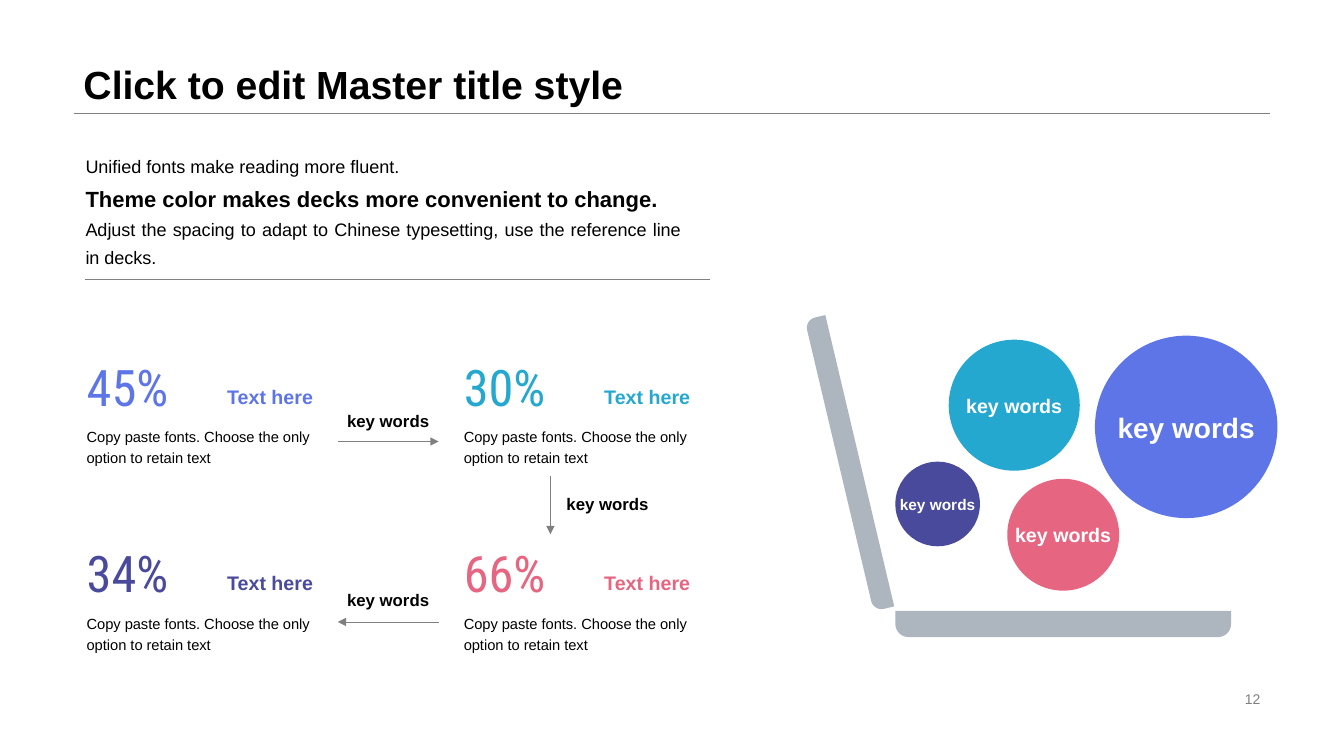
"""Build the key words slide with four figures, arrows and a laptop of bubbles."""
from dataclasses import dataclass
from itertools import product

from lxml import etree
from pptx import Presentation, util as u
from pptx.dml.color import RGBColor
from pptx.enum import shapes as sh, text as tx
from pptx.oxml.ns import qn


@dataclass(frozen=True)
class Theme:
    """Colours, fonts and type sizes."""
    ink: str = "000000"
    white: str = "FFFFFF"
    grey: str = "808080"
    shell: str = "ADB5BF"
    blue: str = "5E75E8"
    cyan: str = "25A8D0"
    navy: str = "4A4A9D"
    pink: str = "E66581"
    font: str = "Arial"
    slim: str = "Roboto Condensed"
    title: float = 28
    figure: float = 36
    lead: float = 15.7
    body: float = 12.9
    head: float = 14
    label: float = 12
    note: float = 10.5
    page: float = 10
    small: float = 11
    large: float = 20


@dataclass(frozen=True)
class Box:
    """Place in grid columns and rows."""
    col: float
    row: float
    wide: float
    high: float


@dataclass(frozen=True)
class Run:
    """One run of styled text."""
    words: str
    size: float
    hue: str = Theme.ink
    bold: bool = False
    font: str = Theme.font


@dataclass(frozen=True)
class Rule:
    """A straight line between two grid points."""
    start: tuple[float, float]
    end: tuple[float, float]
    width: float = 0.25
    arrow: bool = False


@dataclass(frozen=True)
class Ball:
    """A circle with a label."""
    col: float
    row: float
    size: float
    hue: str
    type: float


@dataclass(frozen=True)
class Bar:
    """A turned half of the laptop."""
    box: Box
    turn: float


@dataclass(frozen=True)
class Tag:
    """A label beside an arrow."""
    col: float
    row: float
    side: tx.PP_ALIGN


T = Theme()
CELL = u.Inches(0.1)
LEFT, MID, RIGHT, FULL = tx.PP_ALIGN.LEFT, tx.PP_ALIGN.CENTER, tx.PP_ALIGN.RIGHT, tx.PP_ALIGN.JUSTIFY
TOP, CORE, BASE = tx.MSO_ANCHOR.TOP, tx.MSO_ANCHOR.MIDDLE, tx.MSO_ANCHOR.BOTTOM
KEY = "key words"
FACTS = [("45%", T.blue), ("30%", T.cyan), ("34%", T.navy), ("66%", T.pink)]
RULES = [
    Rule((7.3, 11.2), (126, 11.2)),
    Rule((8.4, 27.7), (70.4, 27.7), 0.75),
    Rule((33.5, 43.8), (43.5, 43.8), arrow=True),
    Rule((43.5, 61.7), (33.5, 61.7), arrow=True),
    Rule((54.6, 47.2), (54.6, 53), arrow=True),
]
TAGS = [Tag(33.3, 40, MID), Tag(33.3, 57.8, MID), Tag(55.2, 48.3, LEFT)]
BARS = [Bar(Box(88.8, 60.6, 33.3, 2.6), 180), Bar(Box(69.4, 44.9, 29.7, 2.1), 256.7)]
BALLS = [
    Ball(88.8, 45.8, 8.4, T.navy, T.small),
    Ball(99.9, 47.5, 11.1, T.pink, T.head),
    Ball(94.1, 33.7, 13, T.cyan, T.head),
    Ball(108.6, 33.3, 18.1, T.blue, T.large),
]
INTRO = [
    Run("Unified fonts make reading more fluent.", T.body),
    Run("Theme color makes decks more convenient to change.", T.lead, bold=True),
    Run("Adjust the spacing to adapt to Chinese typesetting, use the reference line in decks.", T.body),
]


def grid(*cells: float) -> list[int]:
    """Turn grid counts into slide lengths."""
    return [round(n * CELL) for n in cells]


def place(box: Box) -> list[int]:
    """Give left, top, width and height."""
    return grid(box.col, box.row, box.wide, box.high)


def write(frame, runs: list[Run], side=LEFT, hold=TOP, wrap: bool = True, lead: float = 1) -> None:
    """Fill a text frame with one run to a paragraph."""
    frame.word_wrap = wrap
    frame.vertical_anchor = hold
    for i, item in enumerate(runs):
        para = frame.add_paragraph() if i else frame.paragraphs[0]
        para.alignment = side
        para.line_spacing = lead
        run = para.add_run()
        run.text = item.words
        font = run.font
        font.name, font.size, font.bold = item.font, u.Pt(item.size), item.bold
        font.color.rgb = RGBColor.from_string(item.hue)


def label(slide, box: Box, runs: list[Run], tight: bool = False, **style) -> None:
    """Add a text box, without insets if tight."""
    frame = slide.shapes.add_textbox(*place(box)).text_frame
    if tight:
        frame.margin_left = frame.margin_right = frame.margin_top = frame.margin_bottom = 0
    write(frame, runs, **style)


def solid(slide, kind, box: Box, hue: str):
    """Add a plain filled shape."""
    shape = slide.shapes.add_shape(kind, *place(box))
    shape.shadow.inherit = False
    shape.fill.solid()
    shape.fill.fore_color.rgb = RGBColor.from_string(hue)
    shape.line.fill.background()
    return shape


def draw(slide, rule: Rule) -> None:
    """Add a line or an arrow."""
    line = slide.shapes.add_connector(sh.MSO_CONNECTOR.STRAIGHT, *grid(*rule.start, *rule.end))
    line.line.color.rgb = RGBColor.from_string(T.grey)
    line.line.width = u.Pt(rule.width)
    props = line._element.spPr
    if rule.arrow:
        etree.SubElement(props.find(qn("a:ln")), qn("a:tailEnd"), type="triangle")
    etree.SubElement(props, qn("a:effectLst"))


def fact(slide, col: float, row: float, share: str, hue: str) -> None:
    """Add a figure with its heading and note."""
    note = Run("Copy paste fonts. Choose the only option to retain text", T.note)
    label(slide, Box(col, row + 6.8, 24.4, 5.2), [note], True, lead=1.2)
    label(slide, Box(col, row, 18.4, 7.4), [Run(share, T.figure, hue, font=T.slim)], True)
    label(slide, Box(col + 9.25, row + 2.6, 13.2, 2.9), [Run("Text here", T.head, hue, True)],
          True, side=RIGHT, hold=CORE, wrap=False)


def main() -> None:
    """Draw the slide and save it."""
    deck = Presentation()
    deck.slide_width, deck.slide_height = u.Inches(13.33), u.Inches(7.5)
    slide = deck.slides.add_slide(deck.slide_layouts[6])
    label(slide, Box(7.3, 0, 118.7, 11.2),
          [Run("Click to edit Master title style", T.title, bold=True)], hold=BASE, lead=0.9)
    label(slide, Box(94.2, 68.2, 31.8, 2.3), [Run("12", T.page, T.grey)], side=RIGHT, hold=CORE)
    for bar in BARS:
        shape = solid(slide, sh.MSO_SHAPE.ROUND_2_SAME_RECTANGLE, bar.box, T.shell)
        shape.adjustments[0] = 0.5
        shape.rotation = bar.turn
    for ball in BALLS:
        shape = solid(slide, sh.MSO_SHAPE.OVAL, Box(ball.col, ball.row, ball.size, ball.size), ball.hue)
        write(shape.text_frame, [Run(KEY, ball.type, T.white, True)], MID, CORE, False)
    label(slide, Box(7.5, 14.3, 61, 13.4), INTRO, side=FULL, lead=1.3)
    for (row, col), (share, hue) in zip(product((35.3, 53.8), (8.6, 46)), FACTS):
        fact(slide, col, row, share, hue)
    for rule in RULES:
        draw(slide, rule)
    for tag in TAGS:
        label(slide, Box(tag.col, tag.row, 10.4, 3.4), [Run(KEY, T.label, bold=True)],
              side=tag.side, hold=CORE, wrap=False)
    deck.save("out.pptx")


if __name__ == "__main__":
    main()
